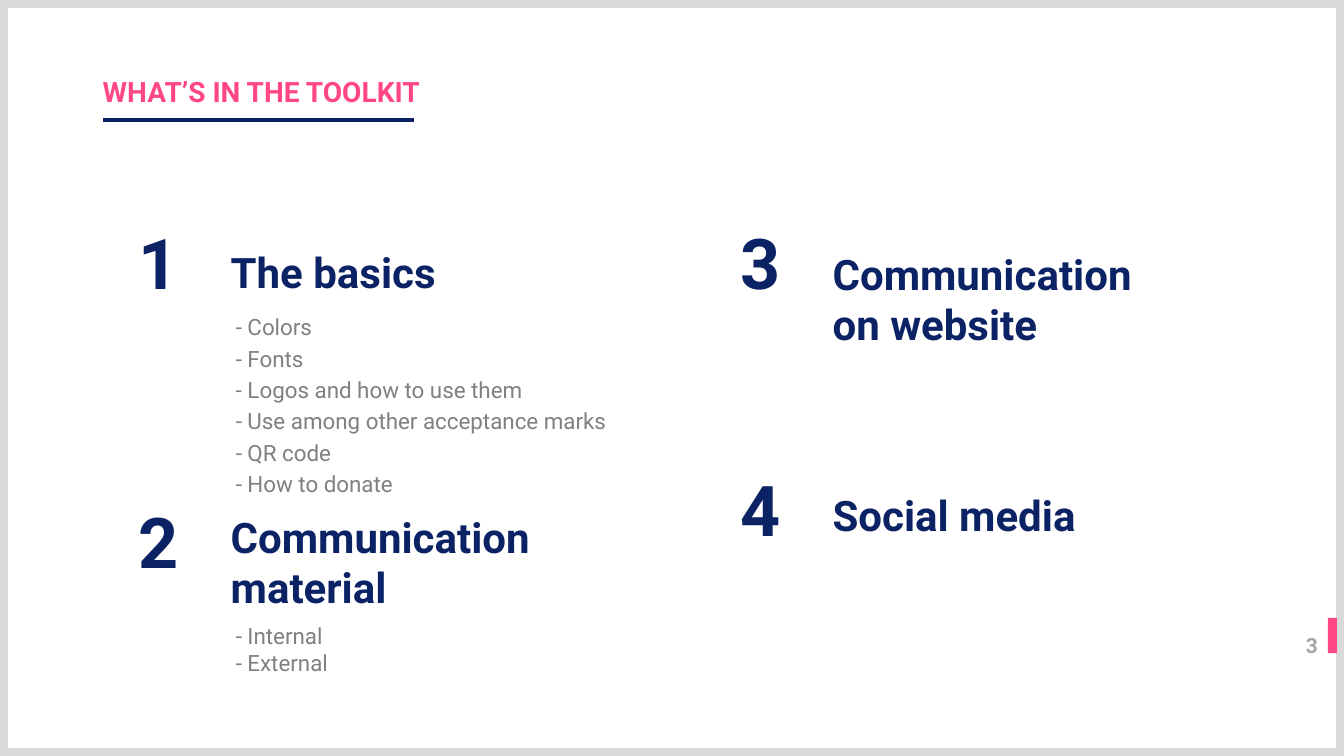
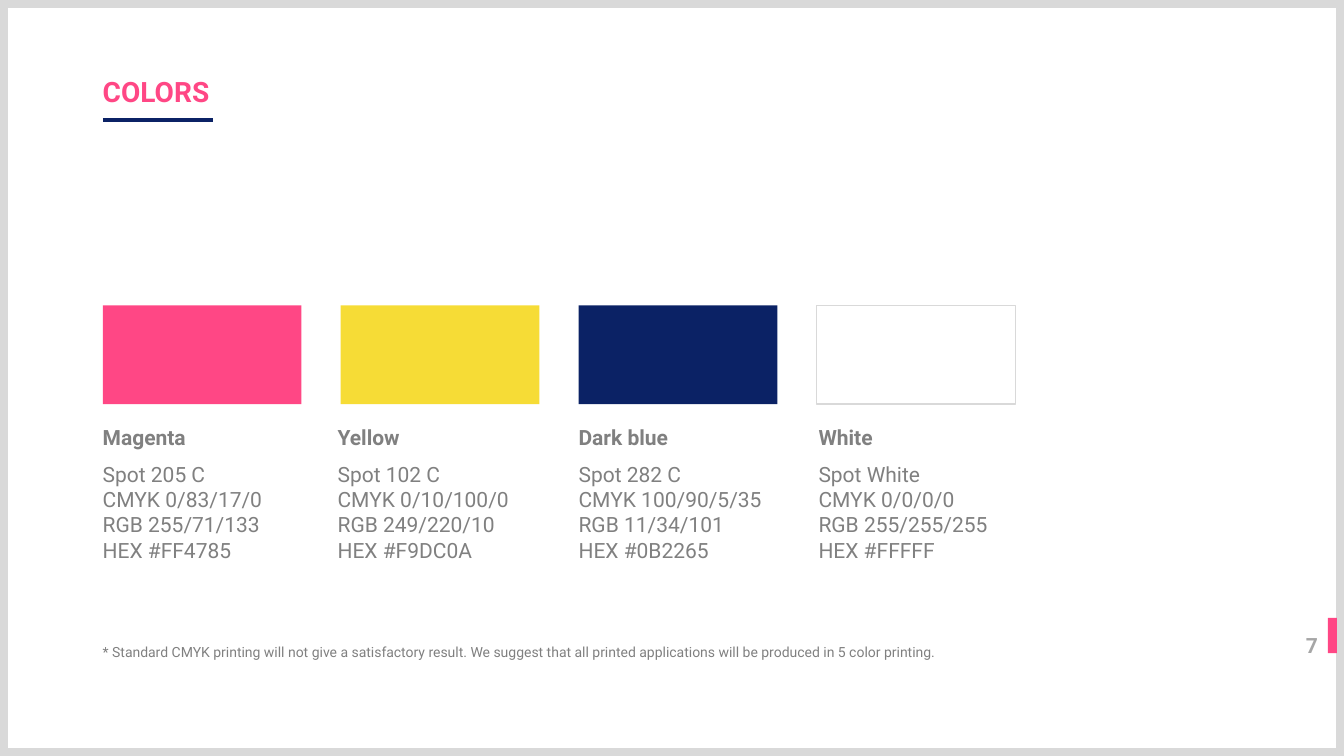
import pptx
import pptx.util
import pptx.dml.color
import pptx.enum.shapes
import pptx.enum.text
import pptx.oxml.ns
import lxml.etree

Inches = pptx.util.Inches
Pt = pptx.util.Pt
RGBColor = pptx.dml.color.RGBColor
ALIGN = pptx.enum.text.PP_ALIGN
ANCHOR = pptx.enum.text.MSO_ANCHOR

# Shared look
FONT = "Roboto"
MAGENTA = RGBColor(0xFF, 0x47, 0x85)
YELLOW = RGBColor(0xF6, 0xDC, 0x36)
DARK_BLUE = RGBColor(0x0B, 0x22, 0x65)
WHITE = RGBColor(0xFF, 0xFF, 0xFF)
TEXT_GRAY = RGBColor(0x80, 0x80, 0x80)
NUMBER_GRAY = RGBColor(0xA6, 0xA6, 0xA6)
FRAME_GRAY = RGBColor(0xD9, 0xD9, 0xD9)
SLIDE_W, SLIDE_H = 13.33, 7.5
TEXT_X = 0.92
LEFT = 1.02

# Toolkit sections: number, left, number top, heading top, heading lines
SECTIONS = [
    ("1", 1.0, 2.34, 1.84, ["The basics"]),
    ("2", 1.0, 5.11, 4.97, ["Communication", "material"]),
    ("3", 6.97, 2.34, 2.36, ["Communication", "on website"]),
    ("4", 6.97, 4.79, 4.26, ["Social media"]),
]
HEADING_OFFSET = 1.19
BASICS = ["- Colors", "- Fonts", "- Logos and how to use them",
          "- Use among other acceptance marks", "- QR code", "- How to donate"]
MATERIAL = ["- Internal", "- External"]

# Swatches: name, fill, outline, text left, colour values
SWATCHES = [
    ("Magenta", MAGENTA, None, 0.92,
     ["Spot 205 C", "CMYK 0/83/17/0", "RGB 255/71/133", "HEX #FF4785"]),
    ("Yellow", YELLOW, None, 3.25,
     ["Spot 102 C", "CMYK 0/10/100/0", "RGB 249/220/10", "HEX #F9DC0A"]),
    ("Dark blue", DARK_BLUE, None, 5.64,
     ["Spot 282 C", "CMYK 100/90/5/35", "RGB 11/34/101", "HEX #0B2265"]),
    ("White", WHITE, FRAME_GRAY, 8.02,
     ["Spot White", "CMYK 0/0/0/0", "RGB 255/255/255", "HEX #FFFFF"]),
]
SWATCH_W, SWATCH_H, SWATCH_STEP = 1.97, 0.98, 2.36
FOOTNOTE = ("* Standard CMYK printing will not give a satisfactory result. "
            "We suggest that all printed applications will be produced "
            "in 5 color printing.")


def add_text(s, x, y, w, h, lines, size, color, bold=False, align=ALIGN.LEFT,
             anchor=ANCHOR.TOP, gap=0, tracking=0):
    """Text box with one paragraph per line; gap and tracking in points."""
    sp = s.shapes.add_textbox(Inches(x), Inches(y), Inches(w), Inches(h))
    tf = sp.text_frame
    tf.word_wrap = True
    tf.vertical_anchor = anchor
    tf.text = "\n".join(lines)
    for i, p in enumerate(tf.paragraphs):
        p.alignment = align
        if i and gap:
            p.space_before = Pt(gap)
        for r in p.runs:
            r.font.name = FONT
            r.font.size = Pt(size)
            r.font.bold = bold
            r.font.color.rgb = color
            if tracking:
                r._r.get_or_add_rPr().set("spc", str(round(tracking * 100)))


def add_rect(s, x, y, w, h, fill=None, line=None, weight=1):
    sp = s.shapes.add_shape(pptx.enum.shapes.MSO_SHAPE.RECTANGLE,
                            Inches(x), Inches(y), Inches(w), Inches(h))
    sp.shadow.inherit = False
    if fill is None:
        sp.fill.background()
    else:
        sp.fill.solid()
        sp.fill.fore_color.rgb = fill
    if line is None:
        sp.line.fill.background()
    else:
        sp.line.color.rgb = line
        sp.line.width = Pt(weight)


def add_rule(s, x, y, w):
    rule = s.shapes.add_connector(pptx.enum.shapes.MSO_CONNECTOR.STRAIGHT,
                                  Inches(x), Inches(y), Inches(x + w), Inches(y))
    rule.line.color.rgb = DARK_BLUE
    rule.line.width = Pt(3)
    lxml.etree.SubElement(rule._element.spPr, pptx.oxml.ns.qn("a:effectLst"))


def add_base_slide(prs, title, rule_w, number):
    """Slide with the frame, underlined title and page marker."""
    s = prs.slides.add_slide(prs.slide_layouts[6])
    add_rect(s, 0, 0, SLIDE_W, SLIDE_H, line=FRAME_GRAY, weight=11)
    add_text(s, TEXT_X, 0.54, 5.75, 0.58, [title], 20, MAGENTA, bold=True,
             anchor=ANCHOR.BOTTOM)
    add_rule(s, LEFT, 1.19, rule_w)
    add_rect(s, 13.17, 6.13, 0.09, 0.35, fill=MAGENTA)
    add_text(s, 12.3, 6.23, 0.87, 0.43, [number], 15, NUMBER_GRAY, bold=True,
             align=ALIGN.RIGHT, tracking=0.8)
    return s


def add_section(s, number, x, y, heading_y, heading):
    add_text(s, x, y, 0.87, 0.72, [number], 50, DARK_BLUE, bold=True,
             align=ALIGN.RIGHT, anchor=ANCHOR.BOTTOM, tracking=-1)
    add_text(s, x + HEADING_OFFSET, heading_y, 4.14, 1.15, heading, 30,
             DARK_BLUE, bold=True, anchor=ANCHOR.BOTTOM)


def add_swatch(s, x, name, fill, line, text_x, values):
    add_rect(s, x, 3.03, SWATCH_W, SWATCH_H, fill, line)
    add_text(s, text_x, 4.16, 1.6, 0.45, [name], 15, TEXT_GRAY, bold=True)
    add_text(s, text_x, 4.53, 2.3, 1.23, values, 15, TEXT_GRAY)


def build_toolkit(prs):
    s = add_base_slide(prs, "WHAT’S IN THE TOOLKIT", 3.09, "3")
    for section in SECTIONS:
        add_section(s, *section)
    add_text(s, 2.24, 3.06, 4.25, 1.66, BASICS, 16, TEXT_GRAY, gap=3.2)
    add_text(s, 2.24, 6.12, 1.36, 0.65, MATERIAL, 16, TEXT_GRAY)


def build_colors(prs):
    s = add_base_slide(prs, "COLORS", 1.09, "7")
    for i, swatch in enumerate(SWATCHES):
        add_swatch(s, LEFT + i * SWATCH_STEP, *swatch)
    add_text(s, TEXT_X, 6.33, 8.89, 0.38, [FOOTNOTE], 10, TEXT_GRAY)


def main():
    prs = pptx.Presentation()
    prs.slide_width = Inches(SLIDE_W)
    prs.slide_height = Inches(SLIDE_H)
    build_toolkit(prs)
    build_colors(prs)
    prs.save("out.pptx")


if __name__ == "__main__":
    main()
